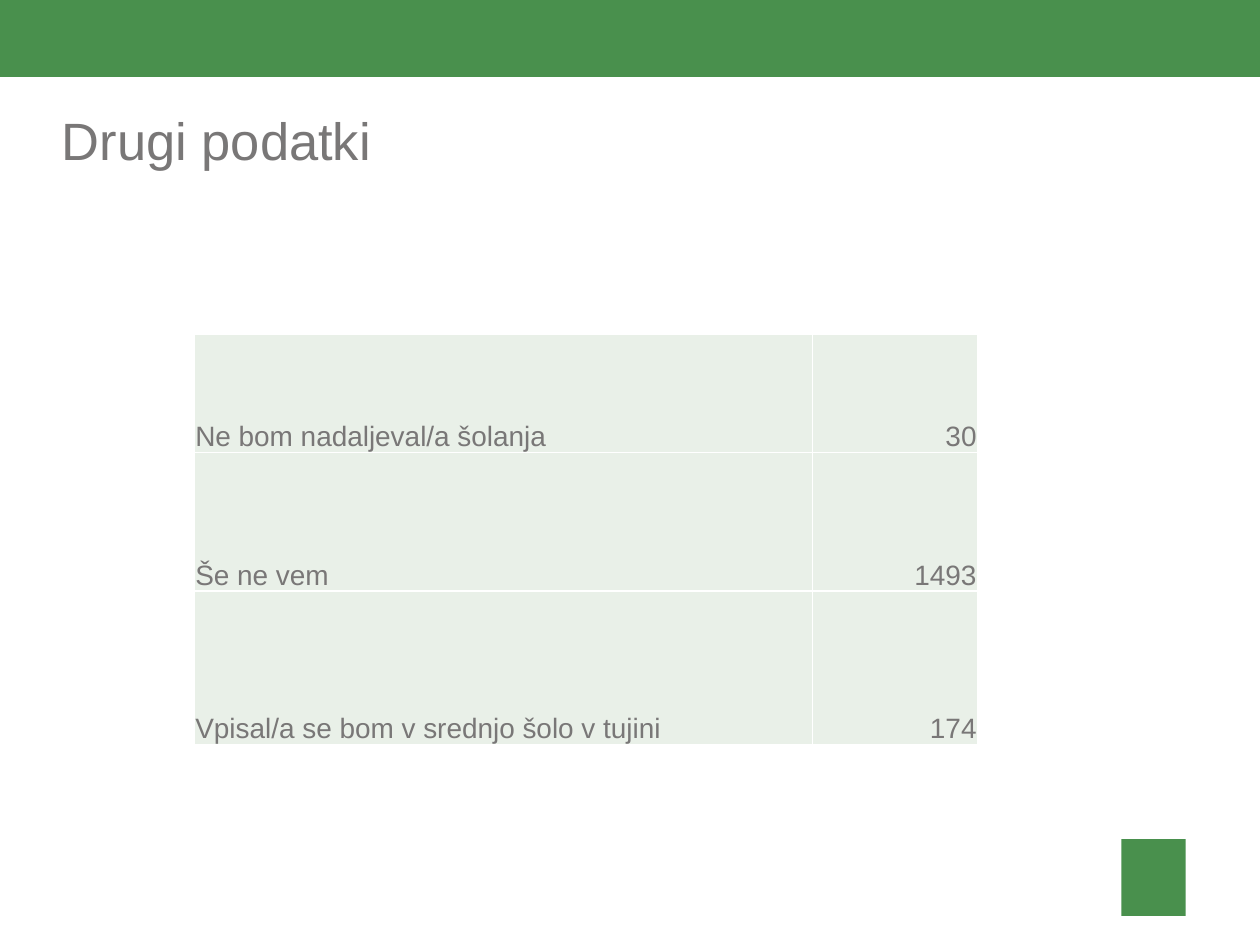
from lxml import etree
from pptx import Presentation
from pptx.dml.color import RGBColor
from pptx.enum.shapes import MSO_SHAPE
from pptx.enum.text import MSO_ANCHOR, PP_ALIGN
from pptx.oxml.ns import qn
from pptx.util import Inches, Pt

RECT = MSO_SHAPE.RECTANGLE
TOP, BOTTOM = MSO_ANCHOR.TOP, MSO_ANCHOR.BOTTOM
LEFT, RIGHT = PP_ALIGN.LEFT, PP_ALIGN.RIGHT
COLORS = {"green": "49904D", "pale": "E9F0E8", "gray": "797777", "white": "FFFFFF"}
ROWS = [
    ("Ne bom nadaljeval/a šolanja", "30"),
    ("Še ne vem", "1493"),
    ("Vpisal/a se bom v srednjo šolo v tujini", "174"),
]


class Deck:
    font = "Arial"

    def __init__(self, wide, high):
        self.prs = Presentation()
        self.prs.slide_width = Inches(wide)
        self.prs.slide_height = Inches(high)
        self.slide = self.prs.slides.add_slide(self.prs.slide_layouts[5])

    def color(self, name):
        return RGBColor.from_string(COLORS[name])

    def style(self, para, size, align):
        para.alignment = align
        for run in para.runs:
            run.font.name = self.font
            run.font.size = Pt(size)
            run.font.color.rgb = self.color("gray")

    def block(self, *box):
        shape = self.slide.shapes.add_shape(RECT, *map(Inches, box))
        shape.shadow.inherit = False
        shape.fill.solid()
        shape.fill.fore_color.rgb = self.color("green")
        shape.line.fill.background()

    def title(self, text, *box):
        shape = self.slide.shapes.title
        shape.left, shape.top, shape.width, shape.height = map(Inches, box)
        frame = shape.text_frame
        frame.text = text
        frame.vertical_anchor = TOP
        frame.margin_left = frame.margin_right = frame.margin_bottom = 0
        frame.margin_top = Inches(0.04)
        self.style(frame.paragraphs[0], 30, LEFT)

    def border(self, cell):
        props = cell._tc.get_or_add_tcPr()
        for spot, side in enumerate(("lnL", "lnR", "lnT", "lnB")):
            line = etree.Element(qn(f"a:{side}"), w=str(Pt(1)))
            fill = etree.SubElement(line, qn("a:solidFill"))
            etree.SubElement(fill, qn("a:srgbClr"), val=COLORS["white"])
            props.insert(spot, line)

    def cell(self, cell, text, align):
        cell.text = text
        cell.vertical_anchor = BOTTOM
        cell.margin_left = cell.margin_right = cell.margin_top = Inches(0.01)
        cell.margin_bottom = 0
        cell.fill.solid()
        cell.fill.fore_color.rgb = self.color("pale")
        self.style(cell.text_frame.paragraphs[0], 16, align)
        self.border(cell)

    def table(self, rows, left, top, widths, heights):
        box = left, top, sum(widths), sum(heights)
        frame = self.slide.shapes.add_table(len(rows), len(widths), *map(Inches, box))
        table = frame.table
        table.first_row = table.horz_banding = False
        for col, width in zip(table.columns, widths):
            col.width = Inches(width)
        for row, height, texts in zip(table.rows, heights, rows):
            row.height = Inches(height)
            for cell, text, align in zip(row.cells, texts, (LEFT, RIGHT)):
                self.cell(cell, text, align)


def main():
    deck = Deck(10, 7.5)
    deck.block(0, -0.01, 10, 0.62)
    deck.block(8.9, 6.66, 0.51, 0.61)
    deck.title("Drugi podatki", 0.49, 0.82, 9.26, 0.71)
    deck.table(ROWS, 1.54, 2.65, (4.91, 1.31), (0.94, 1.1, 1.22))
    deck.prs.save("out.pptx")


if __name__ == "__main__":
    main()
